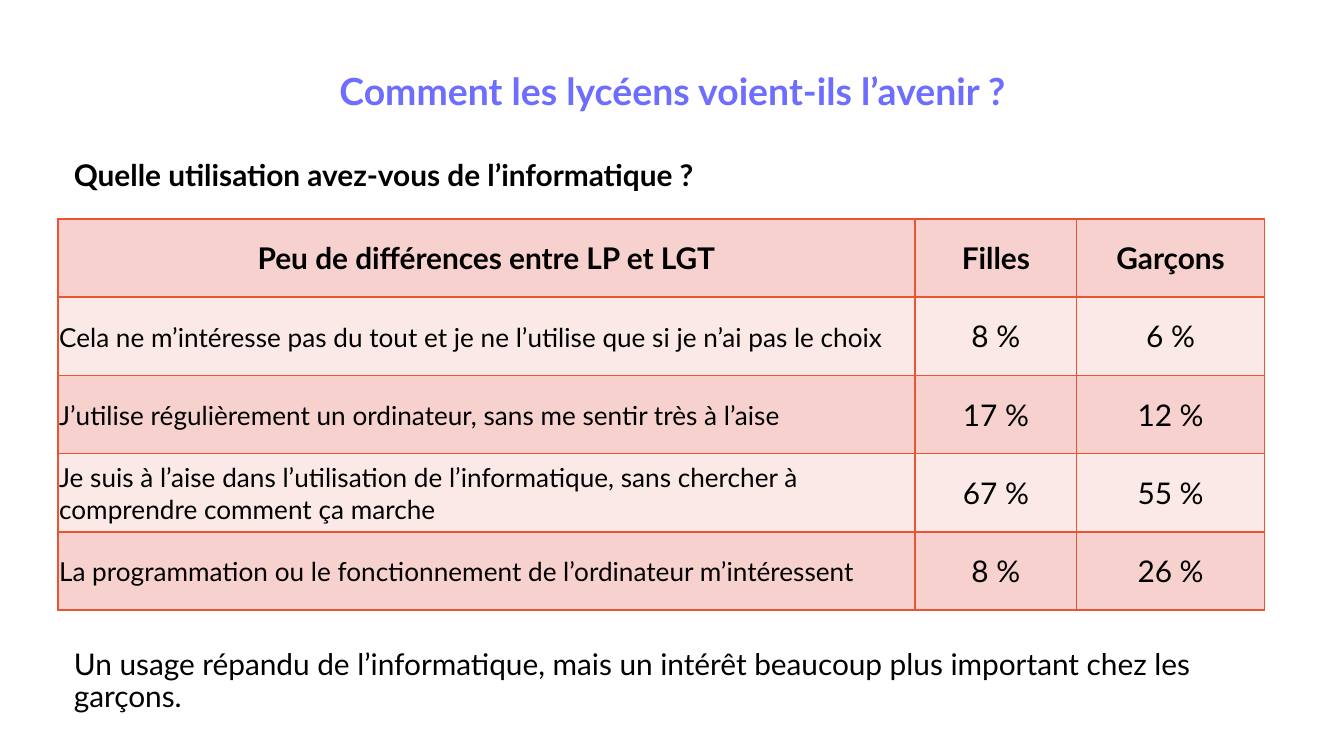
from lxml.etree import SubElement
from pptx import Presentation
from pptx.dml.color import RGBColor
from pptx.enum.text import MSO_ANCHOR, MSO_AUTO_SIZE, PP_ALIGN
from pptx.oxml.ns import qn
from pptx.util import Inches, Pt

HEADERS = ("Peu de différences entre LP et LGT", "Filles", "Garçons")
ANSWERS = (
    ("Cela ne m’intéresse pas du tout et je ne l’utilise que si je n’ai pas le choix", "8 %", "6 %"),
    ("J’utilise régulièrement un ordinateur, sans me sentir très à l’aise", "17 %", "12 %"),
    ("Je suis à l’aise dans l’utilisation de l’informatique, sans chercher à comprendre comment ça marche", "67 %", "55 %"),
    ("La programmation ou le fonctionnement de l’ordinateur m’intéressent", "8 %", "26 %"),
)


def color(value):
    return RGBColor.from_string(value)


def write(text_frame, text, size=16, bold=False, fill="000000", align=PP_ALIGN.LEFT,
          line_spacing=None, space_after=None):
    paragraph = text_frame.paragraphs[0]
    paragraph.alignment = align
    paragraph.line_spacing = line_spacing
    if space_after is not None:
        paragraph.space_after = Pt(space_after)
    run = paragraph.add_run()
    run.text = text
    run.font.name = "Lato"
    run.font.size = Pt(size)
    run.font.bold = bold
    run.font.color.rgb = color(fill)


class SurveySlide:
    accent = "6D6DFF"
    border = "EA5433"
    bands = ("F7D1CE", "FBE9E8")

    def __init__(self, presentation):
        self.slide = presentation.slides.add_slide(presentation.slide_layouts[5])

    def title(self, text, left, top, width, height):
        shape = self.slide.shapes.title
        shape.left, shape.top = Inches(left), Inches(top)
        shape.width, shape.height = Inches(width), Inches(height)
        text_frame = shape.text_frame
        text_frame.auto_size = MSO_AUTO_SIZE.NONE
        text_frame.vertical_anchor = MSO_ANCHOR.MIDDLE
        text_frame.margin_left = Inches(0.12)
        text_frame.margin_bottom = Inches(0.34)
        write(text_frame, text, size=20, bold=True, fill=self.accent,
              align=PP_ALIGN.CENTER, line_spacing=0.9)

    def text(self, text, left, top, width, height, **style):
        shape = self.slide.shapes.add_textbox(Inches(left), Inches(top), Inches(width), Inches(height))
        text_frame = shape.text_frame
        text_frame.word_wrap = True
        text_frame.vertical_anchor = MSO_ANCHOR.MIDDLE
        text_frame.margin_left = Inches(0.12)
        write(text_frame, text, line_spacing=0.9, **style)

    def table(self, rows, left, top, column_widths, height):
        table = self.slide.shapes.add_table(
            len(rows), len(column_widths), Inches(left), Inches(top),
            Inches(sum(column_widths)), Inches(height)).table
        for column, width in zip(table.columns, column_widths):
            column.width = Inches(width)
        for row_index, values in enumerate(rows):
            for column_index, value in enumerate(values):
                cell = table.cell(row_index, column_index)
                self.outline(cell)
                cell.fill.solid()
                cell.fill.fore_color.rgb = color(self.bands[row_index % 2])
                cell.vertical_anchor = MSO_ANCHOR.MIDDLE
                header = row_index == 0
                if header or column_index > 0:
                    write(cell.text_frame, value, bold=header, align=PP_ALIGN.CENTER)
                else:
                    cell.margin_left = cell.margin_right = cell.margin_top = Inches(0.01)
                    cell.margin_bottom = 0
                    write(cell.text_frame, value, size=14)

    def outline(self, cell):
        properties = cell._tc.get_or_add_tcPr()
        for side in ("a:lnL", "a:lnR", "a:lnT", "a:lnB"):
            line = SubElement(properties, qn(side), w=str(Pt(1)))
            fill = SubElement(line, qn("a:solidFill"))
            SubElement(fill, qn("a:srgbClr"), val=self.border)


def main():
    presentation = Presentation()
    presentation.slide_width = Inches(10)
    presentation.slide_height = Inches(10 * 9 / 16)
    survey = SurveySlide(presentation)
    survey.title("Comment les lycéens voient-ils l’avenir ?", 0.43, 0.37, 9.13, 0.94)
    survey.text("Quelle utilisation avez-vous de l’informatique ?", 0.43, 0.92, 9.13, 0.79, bold=True)
    survey.table((HEADERS, *ANSWERS), 0.43, 1.63, (6.38, 1.2, 1.4), 2.91)
    survey.text("Un usage répandu de l’informatique, mais un intérêt beaucoup plus important chez les garçons.",
                0.43, 4.78, 9.29, 0.59, space_after=6)
    presentation.save("out.pptx")


if __name__ == "__main__":
    main()
